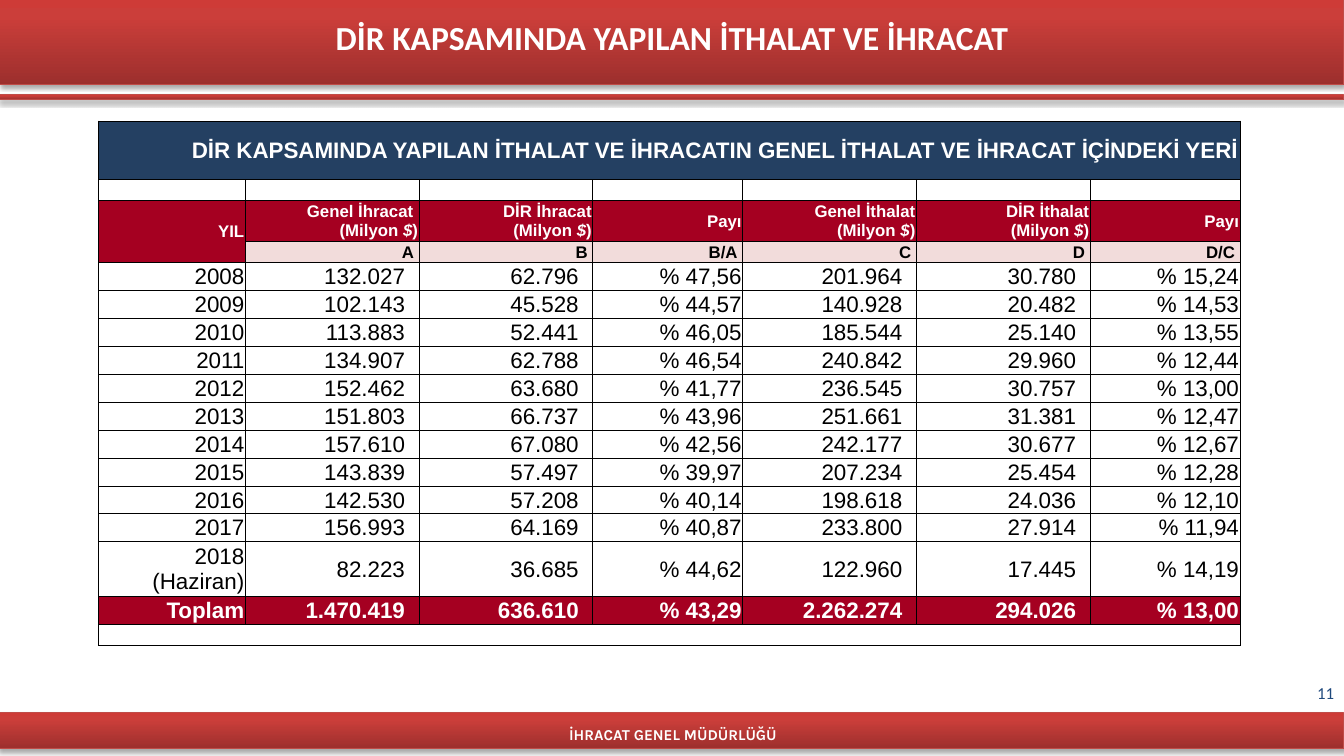
from pptx import Presentation
from pptx.dml.color import RGBColor as RGB
from pptx.enum.shapes import MSO_SHAPE as Kind
from pptx.enum.text import MSO_ANCHOR as Anchor, MSO_AUTO_SIZE as Auto, PP_ALIGN as Align
from pptx.oxml import parse_xml as to_xml
from pptx.oxml.ns import nsdecls
from pptx.util import Inches, Pt

WIDE, HIGH = Inches(13.33), Inches(7.5)
HUES = {
    "white": "FFFFFF", "black": "000000", "navy": "244062", "red": "A50021",
    "pink": "F2DCDB", "blue": "1F497D", "edge": "BF4C48",
    "dark": "9C2F2D", "mid": "CB3E3A", "light": "CE3B37",
}

# Table sizes, as percent of the slide
COLS = [10.9, 12.93, 12.93, 11.15, 12.93, 12.93, 11.15]
ROWS = [7.73, 2.75, 5.4, 2.75] + [3.68] * 10 + [7.27, 3.68, 2.75]

# Table wording
BANNER = "DİR KAPSAMINDA YAPILAN İTHALAT VE İHRACATIN GENEL İTHALAT VE İHRACAT İÇİNDEKİ YERİ"
HEADS = ["YIL", "Genel İhracat \n(Milyon $)", "DİR İhracat\n(Milyon $)", "Payı",
         "Genel İthalat\n(Milyon $)", "DİR İthalat\n(Milyon $)", "Payı"]
KEYS = ["", "A", "B", "B/A", "C", "D", "D/C"]
YEARS = [
    ["2008", "132.027", "62.796", "% 47,56", "201.964", "30.780", "% 15,24"],
    ["2009", "102.143", "45.528", "% 44,57", "140.928", "20.482", "% 14,53"],
    ["2010", "113.883", "52.441", "% 46,05", "185.544", "25.140", "% 13,55"],
    ["2011", "134.907", "62.788", "% 46,54", "240.842", "29.960", "% 12,44"],
    ["2012", "152.462", "63.680", "% 41,77", "236.545", "30.757", "% 13,00"],
    ["2013", "151.803", "66.737", "% 43,96", "251.661", "31.381", "% 12,47"],
    ["2014", "157.610", "67.080", "% 42,56", "242.177", "30.677", "% 12,67"],
    ["2015", "143.839", "57.497", "% 39,97", "207.234", "25.454", "% 12,28"],
    ["2016", "142.530", "57.208", "% 40,14", "198.618", "24.036", "% 12,10"],
    ["2017", "156.993", "64.169", "% 40,87", "233.800", "27.914", "% 11,94"],
    ["2018\v(Haziran)", "82.223", "36.685", "% 44,62", "122.960", "17.445", "% 14,19"],
]
TOTAL = ["Toplam", "1.470.419", "636.610", "% 43,29", "2.262.274", "294.026", "% 13,00"]


def across(part):
    return round(WIDE * part / 100)


def down(part):
    return round(HIGH * part / 100)


def area(x, y, w, h):
    return across(x), down(y), across(w), down(h)


def color(name):
    return RGB.from_string(HUES[name])


def write(frame, text, size=16, font="Arial", hue="black", bold=False, align=Align.RIGHT):
    """Fill a text frame, one paragraph per line, with the dollar sign in italics."""
    frame.text = text
    for para in frame.paragraphs:
        para.alignment = align
        if "$" in para.text:
            parts = para.text.partition("$")
            para.clear()
            for part in parts:
                run = para.add_run()
                run.text = part
                run.font.italic = part == "$"
        for run in para.runs:
            face = run.font
            face.size, face.name, face.bold = Pt(size), font, bold
            face.color.rgb = color(hue)


def add_bar(slide, y, h):
    """Full-width red band with a gradient and a soft shadow."""
    bar = slide.shapes.add_shape(Kind.RECTANGLE, *area(0, y, 100, h))
    bar.line.color.rgb = color("edge")
    bar.line.width = Pt(0.75)
    stops = "".join(
        f'<a:gs pos="{pos}000"><a:srgbClr val="{HUES[hue]}"/></a:gs>'
        for pos, hue in [(0, "dark"), (80, "mid"), (100, "light")])
    props = bar._element.spPr
    props.insert(2, to_xml(
        f'<a:gradFill {nsdecls("a")} rotWithShape="1"><a:gsLst>{stops}</a:gsLst>'
        '<a:lin ang="16200000" scaled="0"/></a:gradFill>'))
    props.append(to_xml(
        f'<a:effectLst {nsdecls("a")}><a:outerShdw blurRad="{Pt(3.1)}" dist="{Pt(1.8)}" '
        f'dir="5400000" rotWithShape="0"><a:srgbClr val="{HUES["black"]}">'
        '<a:alpha val="35000"/></a:srgbClr></a:outerShdw></a:effectLst>'))


def add_label(slide, text, spot, **style):
    frame = slide.shapes.add_textbox(*area(*spot)).text_frame
    frame.word_wrap = True
    frame.vertical_anchor = Anchor.MIDDLE
    write(frame, text, **style)


def set_title(slide, text):
    title = slide.shapes.title
    title.left, title.top, title.width, title.height = area(0, 1.6, 100, 6.67)
    frame = title.text_frame
    write(frame, text, size=24, font="Calibri", hue="white", bold=True, align=Align.CENTER)
    frame.vertical_anchor = Anchor.TOP
    frame.auto_size = Auto.SHAPE_TO_FIT_TEXT
    slide.shapes._spTree.append(title._element)  # in front of the bars


def rule(cell):
    """Thin black border on all four sides."""
    for spot, side in enumerate("LRTB"):
        cell._tc.get_or_add_tcPr().insert(spot, to_xml(
            f'<a:ln{side} {nsdecls("a")} w="{Pt(0.5)}"><a:solidFill>'
            f'<a:srgbClr val="{HUES["black"]}"/></a:solidFill></a:ln{side}>'))


def set_cell(cell, text="", fill=None, pad=0.01, **style):
    cell.margin_left = cell.margin_top = Inches(0.01)
    cell.margin_right, cell.margin_bottom = Inches(pad), 0
    cell.vertical_anchor = Anchor.MIDDLE
    if fill:
        cell.fill.solid()
        cell.fill.fore_color.rgb = color(fill)
    else:
        cell.fill.background()
    if text:
        write(cell.text_frame, text, **style)
    else:  # keeps an empty row low
        cell.text_frame.paragraphs[0]._p.append(
            to_xml(f'<a:endParaRPr {nsdecls("a")} sz="800"/>'))
    rule(cell)


def add_grid(slide):
    spot = area(7.35, 16, sum(COLS), sum(ROWS))
    grid = slide.shapes.add_table(len(ROWS), len(COLS), *spot).table
    grid.first_row = grid.horz_banding = False
    for col, w in zip(grid.columns, COLS):
        col.width = across(w)
    for row, h in zip(grid.rows, ROWS):
        row.height = down(h)

    # Each row: its texts and its format
    blank = [""] * len(COLS)
    head = dict(fill="red", hue="white", bold=True)
    lines = [([BANNER] + blank[1:], dict(head, fill="navy")), (blank, {}),
             (HEADS, dict(head, size=12)),
             (KEYS, dict(fill="pink", size=12, bold=True, pad=0.05))]
    lines += [(year, {}) for year in YEARS]
    lines += [(TOTAL, head), (blank, {})]
    for r, (texts, style) in enumerate(lines):
        for c, text in enumerate(texts):
            sums = r > 3 and c in (1, 2, 4, 5)  # amounts stand off the edge
            set_cell(grid.cell(r, c), text, **(dict(style, pad=0.14) if sums else style))

    # Merged cells
    end = len(ROWS) - 1
    for top, left, low, right in [(0, 0, 0, 6), (2, 0, 3, 0), (end, 0, end, 6)]:
        grid.cell(top, left).merge(grid.cell(low, right))


def main():
    deck = Presentation()
    deck.slide_width, deck.slide_height = WIDE, HIGH
    slide = deck.slides.add_slide(deck.slide_layouts[5])

    # Header and footer bands
    for y, h in [(0, 11.2), (12.53, 0.67), (94.27, 4.8)]:
        add_bar(slide, y, h)
    add_label(slide, "İHRACAT GENEL MÜDÜRLÜĞÜ", (39.38, 95.33, 21.38, 3.73),
              size=10.8, font="Karla", hue="white", bold=True, align=Align.CENTER)
    add_label(slide, "11", (76.67, 88.93, 23.33, 5.33),
              size=12, font="Calibri", hue="blue")

    # Title and table
    set_title(slide, "DİR KAPSAMINDA YAPILAN İTHALAT VE İHRACAT")
    add_grid(slide)
    deck.save("out.pptx")


if __name__ == "__main__":
    main()
